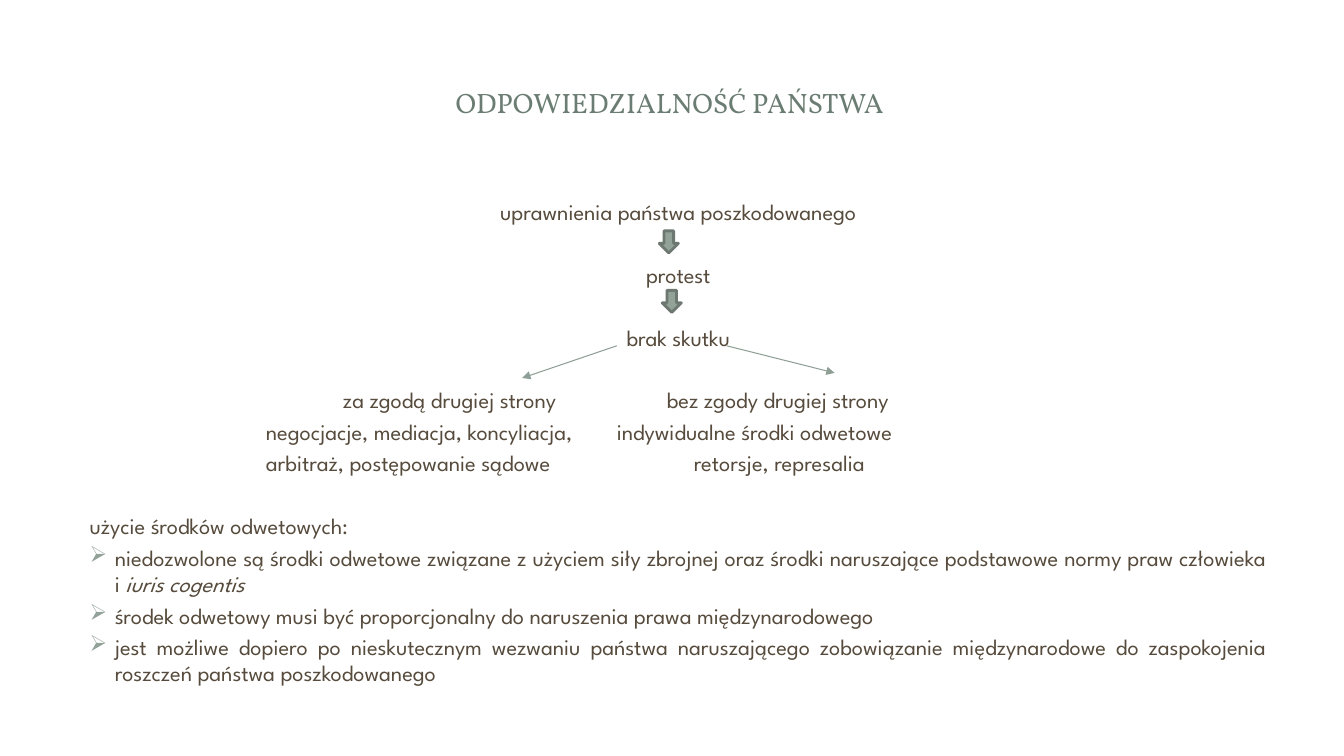
from lxml.etree import SubElement
from pptx import Presentation
from pptx.dml.color import RGBColor
from pptx.enum.shapes import MSO_CONNECTOR as Connector, MSO_SHAPE as Shape
from pptx.enum.text import MSO_ANCHOR as Anchor, PP_ALIGN as Align
from pptx.oxml.ns import qn
from pptx.util import Pt

WHITE = RGBColor(0xFF, 0xFF, 0xFF)
TITLE_GREEN = RGBColor(0x6B, 0x7D, 0x72)
BROWN = RGBColor(0x56, 0x4B, 0x3C)
SAGE = RGBColor(0x93, 0xA2, 0x99)
ARROW_EDGE = RGBColor(0x6D, 0x78, 0x71)
BRANCH_LINE = RGBColor(0x8F, 0x9F, 0x96)

TITLE_FONT = {"name": "Vollkorn", "size": Pt(20)}
BODY_FONT = {"name": "League Spartan", "size": Pt(16)}
LINE_HEIGHT = 18.9
ROW_GAP = 3.6
STEP_GAP = 26.1
BULLET_INDENT = 18

STEPS = ["uprawnienia państwa poszkodowanego", "protest", "brak skutku"]
BRANCHES = [
    (190, [("za zgodą drugiej strony", 55),
           ("negocjacje, mediacja, koncyliacja,", 0),
           ("arbitraż, postępowanie sądowe", 0)]),
    (440.6, [("bez zgody drugiej strony", 35.8),
             ("indywidualne środki odwetowe", 0),
             ("retorsje, represalia", 55)]),
]
RULES_HEADING = "użycie środków odwetowych:"
RULES = [
    ("niedozwolone są środki odwetowe związane z użyciem siły zbrojnej oraz "
     "środki naruszające podstawowe normy praw człowieka i ", "iuris cogentis"),
    ("środek odwetowy musi być proporcjonalny do naruszenia prawa międzynarodowego",),
    ("jest możliwe dopiero po nieskutecznym wezwaniu państwa naruszającego "
     "zobowiązanie międzynarodowe do zaspokojenia roszczeń państwa poszkodowanego",),
]
STEP_ARROWS = [(470.9, 164.9), (473, 207.4)]
BRANCH_ARROWS = [((440.6, 247), (373, 270)), ((519.1, 247), (596.2, 266.4))]


def apply(target, values):
    for attribute, value in values.items():
        setattr(target, attribute, value)


def add_frame(slide, left, top, width, height, anchor=Anchor.TOP):
    frame = slide.shapes.add_textbox(Pt(left), Pt(top), Pt(width), Pt(height)).text_frame
    apply(frame, {"word_wrap": True, "vertical_anchor": anchor, "margin_left": 0,
                  "margin_right": 0, "margin_top": 0, "margin_bottom": 0})
    return frame


def add_paragraph(frame, parts, align, gap=0, indent=0, bullet=False):
    first = not frame.paragraphs[0].runs
    paragraph = frame.paragraphs[0] if first else frame.add_paragraph()
    apply(paragraph, {"alignment": align, "line_spacing": Pt(LINE_HEIGHT),
                      "space_before": Pt(0 if first else gap)})
    properties = paragraph._p.get_or_add_pPr()
    properties.set("marL", str(Pt(indent)))
    if bullet:
        properties.set("indent", str(-Pt(indent)))
        bullet_color = SubElement(properties, qn("a:buClr"))
        SubElement(bullet_color, qn("a:srgbClr")).set("val", str(SAGE))
        SubElement(properties, qn("a:buChar")).set("char", "➢")
    for position, part in enumerate(parts):
        run = paragraph.add_run()
        run.text = part
        apply(run.font, {**BODY_FONT, "italic": position > 0})
        run.font.color.rgb = BROWN


def add_title(slide, wording):
    paragraph = add_frame(slide, 44.6, 32.4, 867.6, 82, Anchor.MIDDLE).paragraphs[0]
    paragraph.alignment = Align.CENTER
    run = paragraph.add_run()
    run.text = wording
    apply(run.font, TITLE_FONT)
    run.font.color.rgb = TITLE_GREEN


def add_step_arrow(slide, left, top):
    arrow = slide.shapes.add_shape(Shape.DOWN_ARROW, Pt(left), Pt(top), Pt(13.7), Pt(15.8))
    arrow.shadow.inherit = False
    arrow.fill.solid()
    arrow.fill.fore_color.rgb = SAGE
    arrow.line.color.rgb = ARROW_EDGE
    arrow.line.width = Pt(2)


def add_branch_arrow(slide, start, end):
    ends = [Pt(value) for value in start + end]
    branch = slide.shapes.add_connector(Connector.STRAIGHT, *ends)
    branch.line.color.rgb = BRANCH_LINE
    branch.line.width = Pt(0.75)
    SubElement(branch.line._get_or_add_ln(), qn("a:tailEnd")).set("type", "triangle")
    SubElement(branch._element.spPr, qn("a:effectLst"))


def main():
    deck = Presentation()
    apply(deck, {"slide_width": Pt(960), "slide_height": Pt(540)})
    slide = deck.slides.add_slide(deck.slide_layouts[6])
    slide.background.fill.solid()
    slide.background.fill.fore_color.rgb = WHITE

    add_title(slide, "ODPOWIEDZIALNOŚĆ PAŃSTWA")

    steps = add_frame(slide, 64, 142, 841, 110)
    for step in STEPS:
        add_paragraph(steps, [step], Align.CENTER, STEP_GAP)

    for left, rows in BRANCHES:
        branch = add_frame(slide, left, 276.4, 235, 64)
        for wording, indent in rows:
            add_paragraph(branch, [wording], Align.LEFT, ROW_GAP, indent)

    rules = add_frame(slide, 64, 366.3, 841, 124)
    add_paragraph(rules, [RULES_HEADING], Align.JUSTIFY)
    for rule in RULES:
        add_paragraph(rules, rule, Align.JUSTIFY, ROW_GAP, BULLET_INDENT, bullet=True)

    for left, top in STEP_ARROWS:
        add_step_arrow(slide, left, top)
    for start, end in BRANCH_ARROWS:
        add_branch_arrow(slide, start, end)

    deck.save("out.pptx")


if __name__ == "__main__":
    main()
